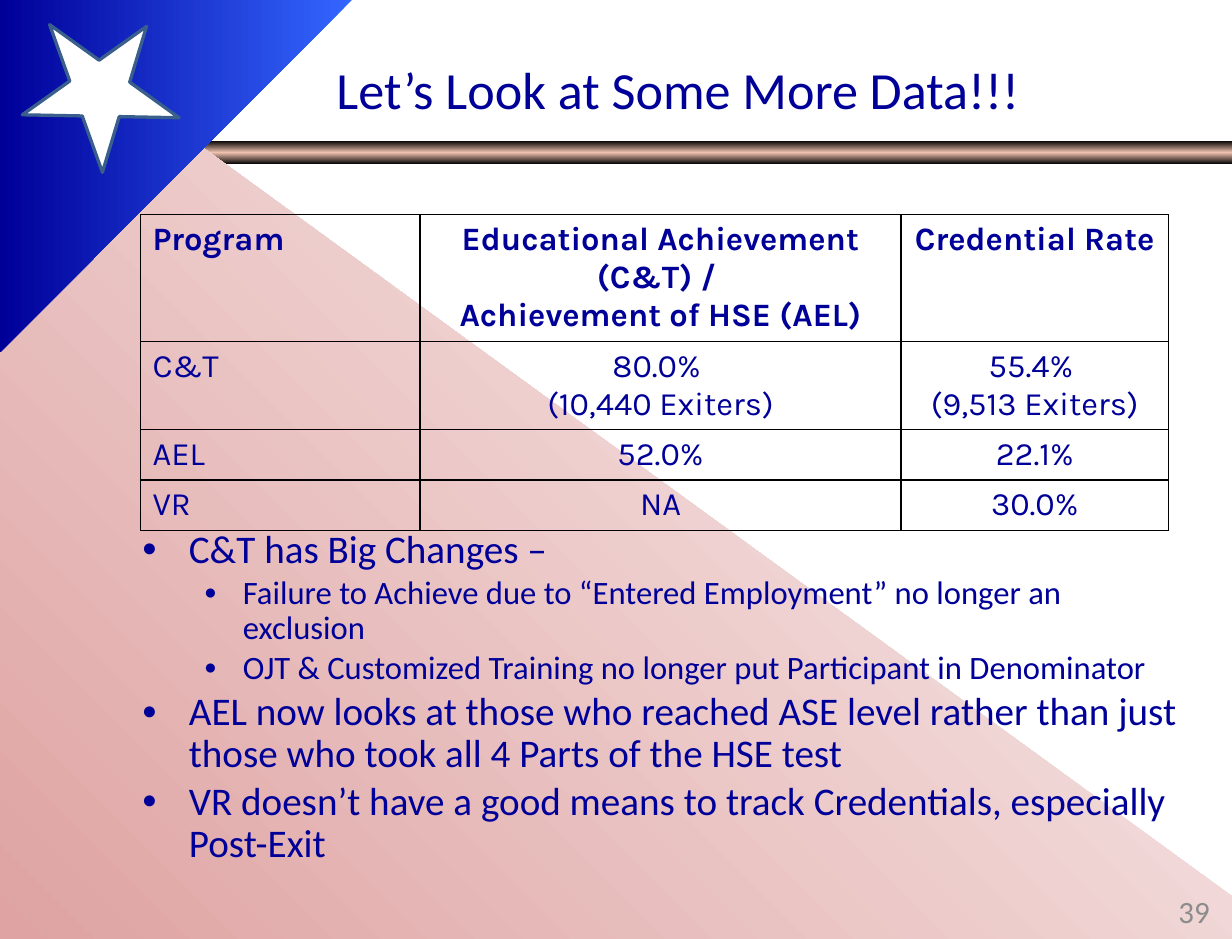
from lxml.etree import SubElement
from pptx import Presentation
from pptx.dml.color import RGBColor
from pptx.enum.shapes import MSO_SHAPE
from pptx.enum.text import MSO_ANCHOR, MSO_AUTO_SIZE, PP_ALIGN
from pptx.oxml.ns import qn
from pptx.util import Inches, Pt

NAVY = "000099"
TITLE = "Let’s Look at Some More Data!!!"
BULLETS = [
    (0, "C&T has Big Changes –"),
    (1, "Failure to Achieve due to “Entered Employment” no longer an exclusion"),
    (1, "OJT & Customized Training no longer put Participant in Denominator"),
    (0, "AEL now looks at those who reached ASE level rather than just "
        "those who took all 4 Parts of the HSE test"),
    (0, "VR doesn’t have a good means to track Credentials, especially Post-Exit"),
]
# Font size, left margin and first-line indent of each bullet level
LEVELS = [(24, 0.66, -0.4), (20, 1.12, -0.33)]
# Each cell is a list of paragraphs
RATES = [
    [["Program"],
     ["Educational Achievement (C&T) / ", "Achievement of HSE (AEL)"],
     ["Credential Rate"]],
    [["C&T"], ["80.0% ", "(10,440 Exiters)"], ["55.4% ", "(9,513 Exiters)"]],
    [["AEL"], ["52.0%"], ["22.1%"]],
    [["VR"], ["NA"], ["30.0%"]],
]
COLUMN_WIDTHS = [2.38, 4.1, 2.28]
ROW_HEIGHTS = [1.08, 0.75, 0.43, 0.43]


def color(hex_value):
    return RGBColor.from_string(hex_value)


def box(left, top, width, height):
    return [Inches(value) for value in (left, top, width, height)]


def place(shape, left, top, width, height):
    shape.left, shape.top, shape.width, shape.height = box(left, top, width, height)


def add_run(paragraph, text, size, font="Calibri", hex_value=NAVY, bold=False):
    run = paragraph.add_run()
    run.text = text
    run.font.size = Pt(size)
    run.font.name = font
    run.font.bold = bold
    run.font.color.rgb = color(hex_value)


def set_frame(frame, anchor):
    frame.word_wrap = True
    frame.auto_size = MSO_AUTO_SIZE.NONE
    frame.vertical_anchor = anchor
    frame.margin_left = frame.margin_right = Inches(0.11)
    frame.margin_top = frame.margin_bottom = Inches(0.05)


def fill_gradient(shape, stops, angle):
    """Stops are (percent, hex); the angle runs counter-clockwise."""
    shape.shadow.inherit = False
    shape.line.fill.background()
    shape.fill.gradient()
    shape.fill.gradient_angle = angle
    stop_list = next(shape._element.iter(qn("a:gsLst")))
    for stop in list(stop_list):
        stop_list.remove(stop)
    for percent, hex_value in stops:
        stop = SubElement(stop_list, qn("a:gs"), pos=str(percent * 1000))
        SubElement(stop, qn("a:srgbClr"), val=hex_value)


def add_triangle(slide, corners, stops, angle):
    builder = slide.shapes.build_freeform(*corners[0], scale=Inches(1))
    builder.add_line_segments(corners[1:], close=True)
    fill_gradient(builder.convert_to_shape(), stops, angle)


def add_backdrop(slide):
    # Metallic rule below the title
    rule = slide.shapes.add_shape(MSO_SHAPE.RECTANGLE, *box(0, 1.2, 10.5, 0.2))
    fill_gradient(rule, [(0, "000000"), (50, "EFC1AF"), (100, "000000")], 270)
    # Pink and blue corners
    add_triangle(slide, [(0, 0), (10.51, 8.03), (0, 8.03)],
                 [(0, "FFFFFF"), (100, "DEA3A2")], 225)
    add_triangle(slide, [(0, 0), (2.84, 0), (0, 2.92)],
                 [(0, "3366FF"), (100, NAVY)], 180)
    # White star
    star = slide.shapes.add_shape(MSO_SHAPE.STAR_5_POINT, *box(0.21, 0.11, 1.36, 1.23))
    star.rotation = 35.7
    star.shadow.inherit = False
    star.fill.solid()
    star.fill.fore_color.rgb = color("FFFFFF")
    star.line.color.rgb = color("3A5F8C")
    star.line.width = Pt(2)


def write_title(title):
    place(title, 1.14, 0.31, 9.28, 0.89)
    set_frame(title.text_frame, MSO_ANCHOR.MIDDLE)
    paragraph = title.text_frame.paragraphs[0]
    paragraph.alignment = PP_ALIGN.CENTER
    add_run(paragraph, TITLE, 32)


def write_bullets(body):
    place(body, 0.84, 4.46, 9.38, 0.97)
    frame = body.text_frame
    set_frame(frame, MSO_ANCHOR.TOP)
    for index, (level, text) in enumerate(BULLETS):
        paragraph = frame.add_paragraph() if index else frame.paragraphs[0]
        size, margin, indent = LEVELS[level]
        paragraph.level = level
        paragraph.line_spacing = 0.9
        paragraph.space_before = Pt(3)
        properties = paragraph._p.get_or_add_pPr()
        properties.set("marL", str(Inches(margin)))
        properties.set("indent", str(Inches(indent)))
        SubElement(properties, qn("a:buSzPct"), val="65000")
        SubElement(properties, qn("a:buChar"), char="●")
        add_run(paragraph, text, size)


def add_page_number(slide):
    frame = slide.shapes.add_textbox(*box(7.97, 7.55, 2.45, 0.43)).text_frame
    set_frame(frame, MSO_ANCHOR.MIDDLE)
    paragraph = frame.paragraphs[0]
    paragraph.alignment = PP_ALIGN.RIGHT
    add_run(paragraph, "39", 19, hex_value="8C8C8C")


def format_cell(cell):
    properties = cell._tc.get_or_add_tcPr()
    for side in ("lnL", "lnR", "lnT", "lnB"):
        line = SubElement(properties, qn(f"a:{side}"), w=str(Pt(1)))
        fill = SubElement(line, qn("a:solidFill"))
        SubElement(fill, qn("a:srgbClr"), val="000000")
    cell.fill.background()


def add_rate_table(slide):
    table = slide.shapes.add_table(
        len(RATES), len(COLUMN_WIDTHS),
        *box(1.2, 1.83, sum(COLUMN_WIDTHS), sum(ROW_HEIGHTS))).table
    table.first_row = table.horz_banding = False
    for column, width in zip(table.columns, COLUMN_WIDTHS):
        column.width = Inches(width)
    for row, height in zip(table.rows, ROW_HEIGHTS):
        row.height = Inches(height)
    for row_index, row in enumerate(RATES):
        for column_index, lines in enumerate(row):
            cell = table.cell(row_index, column_index)
            format_cell(cell)
            frame = cell.text_frame
            for line_index, text in enumerate(lines):
                paragraph = frame.add_paragraph() if line_index else frame.paragraphs[0]
                paragraph.alignment = PP_ALIGN.CENTER if column_index else PP_ALIGN.LEFT
                add_run(paragraph, text, 20, "Karla", bold=row_index == 0)


def main():
    presentation = Presentation()
    presentation.slide_width = Inches(10.5)
    presentation.slide_height = Inches(8)
    slide = presentation.slides.add_slide(presentation.slide_layouts[1])
    title, body = slide.shapes.title, slide.placeholders[1]

    add_backdrop(slide)
    # Bring the placeholders in front of the backdrop
    for placeholder in (title, body):
        slide.shapes._spTree.append(placeholder._element)
    write_title(title)
    write_bullets(body)
    add_page_number(slide)
    add_rate_table(slide)
    presentation.save("out.pptx")


if __name__ == "__main__":
    main()
